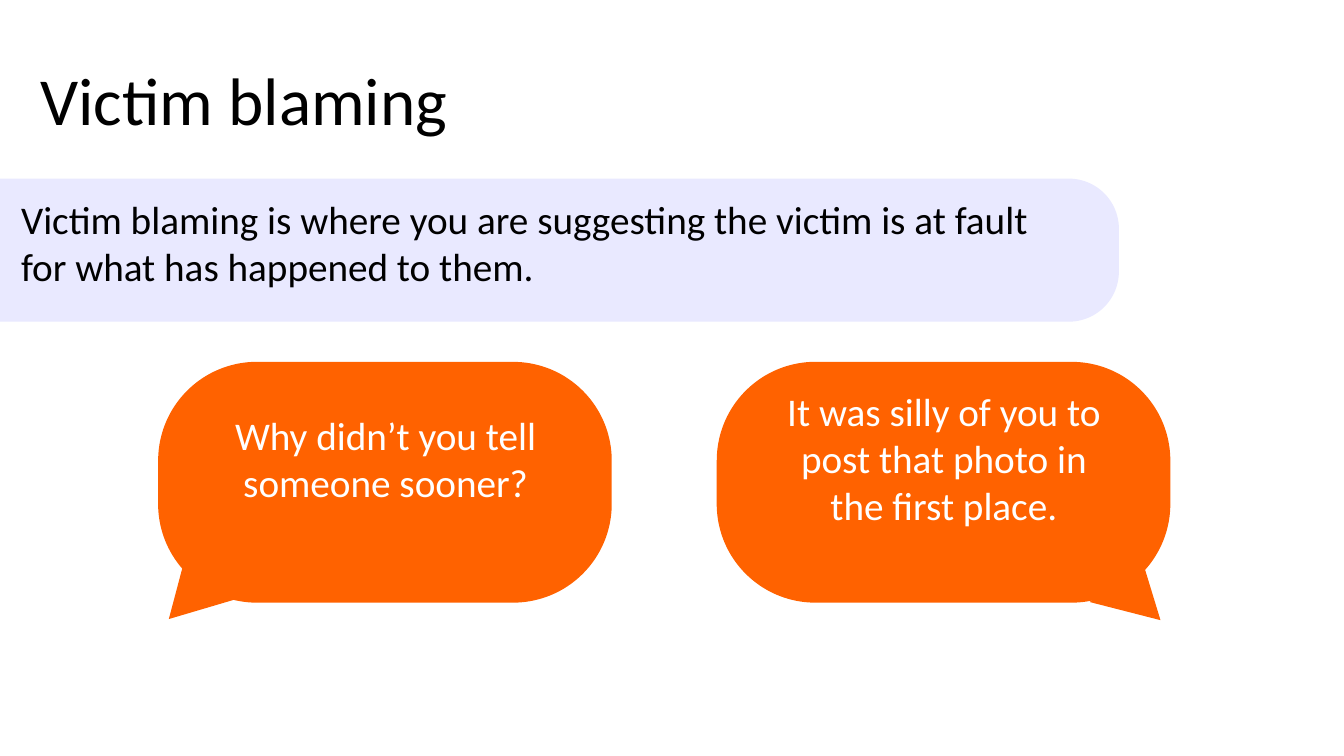
"""Build the slide that explains victim blaming with two speech bubbles."""
import dataclasses

import pptx
import pptx.dml.color
import pptx.enum.shapes
import pptx.enum.text
import pptx.util

Pt = pptx.util.Pt
SHAPES = pptx.enum.shapes.MSO_SHAPE
ALIGN = pptx.enum.text.PP_ALIGN


@dataclasses.dataclass(frozen=True)
class Theme:
    font: str = "Calibri"
    title_size: int = 48
    body_size: int = 28
    dark: str = "000000"
    light: str = "FFFFFF"
    panel: str = "E9E9FF"
    bubble: str = "FF6200"


class SlideBuilder:
    def __init__(self, slide, theme):
        self.slide = slide
        self.theme = theme

    def set_text(self, shape, text, size, color, align=ALIGN.LEFT):
        frame = shape.text_frame
        frame.word_wrap = True
        frame.auto_size = pptx.enum.text.MSO_AUTO_SIZE.NONE
        frame.vertical_anchor = pptx.enum.text.MSO_ANCHOR.TOP
        frame.text = text
        paragraph = frame.paragraphs[0]
        paragraph.alignment = align
        paragraph.font.name = self.theme.font
        paragraph.font.size = Pt(size)
        paragraph.font.color.rgb = pptx.dml.color.RGBColor.from_string(color)

    def title(self, text, left, top, width, height):
        title = self.slide.shapes.title
        title.left, title.top = Pt(left), Pt(top)
        title.width, title.height = Pt(width), Pt(height)
        self.set_text(title, text, self.theme.title_size, self.theme.dark)

    def text(self, text, left, top, width, height, color, align=ALIGN.LEFT):
        box = self.slide.shapes.add_textbox(Pt(left), Pt(top), Pt(width), Pt(height))
        self.set_text(box, text, self.theme.body_size, color, align)

    def shape(self, kind, left, top, width, height, color, rotation=0,
              adjustments=(), parent=None):
        shapes = (parent or self.slide).shapes
        shape = shapes.add_shape(kind, Pt(left), Pt(top), Pt(width), Pt(height))
        shape.shadow.inherit = False
        shape.fill.solid()
        shape.fill.fore_color.rgb = pptx.dml.color.RGBColor.from_string(color)
        shape.line.fill.background()
        shape.rotation = rotation
        for index, value in enumerate(adjustments):
            shape.adjustments[index] = value

    def panel(self, left, top, width, height):
        center_x, center_y = left + width / 2, top + height / 2
        self.shape(SHAPES.ROUND_2_SAME_RECTANGLE, center_x - height / 2,
                   center_y - width / 2, height, width, self.theme.panel,
                   90, (0.35, 0))

    def bubble(self, left, tail_left, tail_top, tail_rotation):
        group = self.slide.shapes.add_group_shape()
        self.shape(SHAPES.ROUNDED_RECTANGLE, left, 258.5, 324, 172,
                   self.theme.bubble, adjustments=(0.41,), parent=group)
        self.shape(SHAPES.ISOSCELES_TRIANGLE, tail_left, tail_top, 51, 45.4,
                   self.theme.bubble, tail_rotation, parent=group)


def main():
    presentation = pptx.Presentation()
    presentation.slide_width, presentation.slide_height = Pt(960), Pt(540)
    slide = presentation.slides.add_slide(presentation.slide_layouts[5])
    theme = Theme()
    builder = SlideBuilder(slide, theme)

    builder.title("Victim blaming", 21.6, 38.2, 485.3, 65.5)
    builder.panel(0, 127.6, 799.2, 102.2)
    builder.text("Victim blaming is where you are suggesting the victim is at "
                 "fault for what has happened to them.",
                 8, 136, 746.6, 75, theme.dark)

    builder.bubble(113, 110.9, 403.2, 224.2)
    builder.bubble(512, 787, 404.6, 133.7)
    quotes = (
        (153.4, 290.2, 108.7, "Why didn’t you tell someone sooner?"),
        (552.2, 272.9, 143.3,
         "It was silly of you to post that photo in the first place."),
    )
    for left, top, height, quote in quotes:
        builder.text(quote, left, top, 244, height, theme.light, ALIGN.CENTER)

    presentation.save("out.pptx")


if __name__ == "__main__":
    main()
